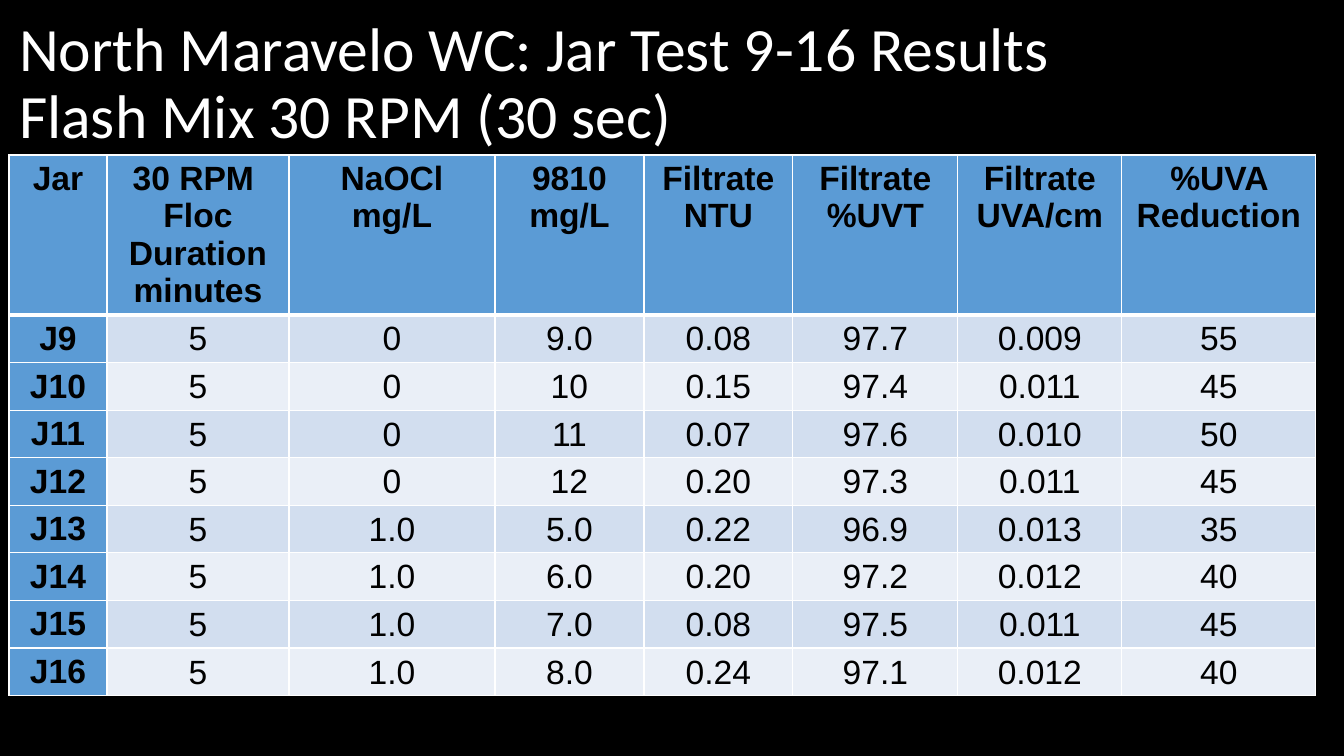
from lxml.etree import SubElement
from pptx import Presentation
from pptx.dml.color import RGBColor
from pptx.enum.text import MSO_ANCHOR as Anchor, MSO_AUTO_SIZE as AutoSize, PP_ALIGN as Align
from pptx.oxml.ns import qn
from pptx.util import Emu, Pt

PX_PER_INCH = 100.8

BLACK = RGBColor(0x00, 0x00, 0x00)
WHITE = RGBColor(0xFF, 0xFF, 0xFF)
HEADER_BLUE = RGBColor(0x5B, 0x9B, 0xD5)
BANDS = (RGBColor(0xD2, 0xDE, 0xEF), RGBColor(0xEA, 0xEF, 0xF7))

TITLE = "North Maravelo WC: Jar Test 9-16 Results\vFlash Mix 30 RPM (30 sec)"
HEADINGS = ("Jar", "30 RPM \nFloc\nDuration\nminutes", "NaOCl\nmg/L", "9810\nmg/L",
            "Filtrate\nNTU", "Filtrate\n%UVT", "Filtrate\nUVA/cm", "%UVA Reduction")
JARS = (
    ("J9", "5", "0", "9.0", "0.08", "97.7", "0.009", "55"),
    ("J10", "5", "0", "10", "0.15", "97.4", "0.011", "45"),
    ("J11", "5", "0", "11", "0.07", "97.6", "0.010", "50"),
    ("J12", "5", "0", "12", "0.20", "97.3", "0.011", "45"),
    ("J13", "5", "1.0", "5.0", "0.22", "96.9", "0.013", "35"),
    ("J14", "5", "1.0", "6.0", "0.20", "97.2", "0.012", "40"),
    ("J15", "5", "1.0", "7.0", "0.08", "97.5", "0.011", "45"),
    ("J16", "5", "1.0", "8.0", "0.24", "97.1", "0.012", "40"),
)
COLUMN_WIDTHS = (98, 182, 206, 149, 149, 165, 164, 194)
HEADER_HEIGHT, JAR_HEIGHT = 105, 44


def px(count):
    return Emu(round(count * 914400 / PX_PER_INCH))


def format_text(frame, font_name, size, color, bold, align):
    for para in frame.paragraphs:
        para.alignment = align
        for span in para.runs:
            font = span.font
            font.name, font.size, font.bold = font_name, Pt(size), bold
            font.color.rgb = color


def set_title(page):
    title = page.shapes.title
    title.left, title.top, title.width, title.height = px(9), px(12), px(1308), px(146)
    frame = title.text_frame
    frame.text = TITLE
    frame.word_wrap = True
    frame.auto_size = AutoSize.NONE
    frame.vertical_anchor = Anchor.MIDDLE
    frame.paragraphs[0].line_spacing = 0.9
    format_text(frame, "Calibri", 44, WHITE, False, Align.LEFT)


def set_borders(cell, top, bottom):
    """Draw white borders: 1 pt at the sides, the given points above and below."""
    properties = cell._tc.get_or_add_tcPr()
    widths = {"a:lnL": 1, "a:lnR": 1, "a:lnT": top, "a:lnB": bottom}
    for position, (tag, width) in enumerate(widths.items()):
        line = SubElement(properties, qn(tag), w=str(Pt(width)))
        fill = SubElement(line, qn("a:solidFill"))
        SubElement(fill, qn("a:srgbClr"), val=str(WHITE))
        properties.insert(position, line)


def fill_cell(cell, text, row, column):
    is_heading = row == 0 or column == 0
    cell.text_frame.text = text
    format_text(cell.text_frame, "Arial", 24, BLACK, is_heading, Align.CENTER)
    if is_heading:
        cell.vertical_anchor = Anchor.TOP
    else:
        cell.vertical_anchor = Anchor.MIDDLE
        cell.margin_left = cell.margin_right = cell.margin_top = px(1)
        cell.margin_bottom = 0
    cell.fill.solid()
    cell.fill.fore_color.rgb = HEADER_BLUE if is_heading else BANDS[(row - 1) % 2]
    set_borders(cell, top=3 if row == 1 else 1, bottom=3 if row == 0 else 1)


def add_results(page):
    rows = (HEADINGS,) + JARS
    heights = [HEADER_HEIGHT] + [JAR_HEIGHT] * len(JARS)
    table = page.shapes.add_table(len(rows), len(HEADINGS), px(9), px(155),
                                  px(sum(COLUMN_WIDTHS)), px(sum(heights))).table
    table.first_col = True
    for column, width in zip(table.columns, COLUMN_WIDTHS):
        column.width = px(width)
    for row, (texts, height) in enumerate(zip(rows, heights)):
        table.rows[row].height = px(height)
        for column, text in enumerate(texts):
            fill_cell(table.cell(row, column), text, row, column)


def main():
    deck = Presentation()
    deck.slide_width, deck.slide_height = px(1344), px(756)
    page = deck.slides.add_slide(deck.slide_layouts[5])
    page.background.fill.solid()
    page.background.fill.fore_color.rgb = BLACK
    set_title(page)
    add_results(page)
    deck.save("out.pptx")


if __name__ == "__main__":
    main()
